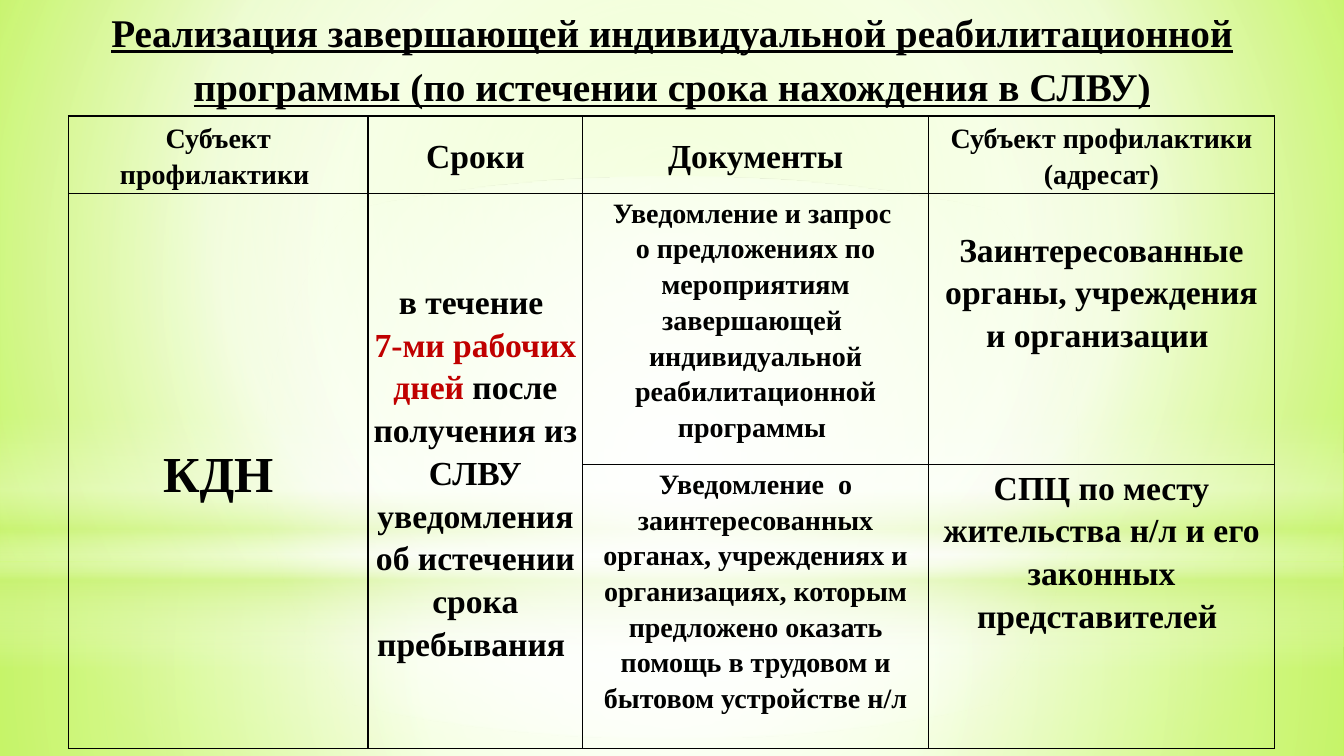
from lxml.etree import SubElement
from pptx import Presentation
from pptx.dml.color import RGBColor
from pptx.enum.shapes import MSO_SHAPE
from pptx.enum.text import MSO_ANCHOR, MSO_AUTO_SIZE, PP_ALIGN
from pptx.oxml import parse_xml
from pptx.oxml.ns import nsdecls, qn
from pptx.util import Inches, Pt

FONT = "Times New Roman"
BLACK = RGBColor(0x00, 0x00, 0x00)
RED = RGBColor(0xC0, 0x00, 0x00)
WHITE = RGBColor(0xFF, 0xFF, 0xFF)
LIME = RGBColor(0xCA, 0xF2, 0x78)
BRIGHT_LIME = RGBColor(0xCA, 0xFF, 0x60)
PALE_LIME = RGBColor(0xF7, 0xFF, 0xE7)
DEEP_LIME = RGBColor(0xB7, 0xFF, 0x29)

CENTRE = (50, 50, 50, 50)
COLUMN_WIDTHS = (2.97, 2.13, 3.43, 3.43)
ROW_HEIGHTS = (0.77, 2.69, 2.82)
HEADERS = (("Субъект профилактики ", 20), ("Сроки", 24),
           ("Документы", 24), ("Субъект профилактики (адресат)", 20))


def set_gradient(fill, owner, stops, focus=None):
    """Fill with (position, colour, opacity) stops: round at focus, else downwards."""
    fill.gradient()
    old = next(owner.iter(qn("a:gradFill")))
    gradient = parse_xml(f'<a:gradFill {nsdecls("a")} rotWithShape="1"/>')
    stop_list = SubElement(gradient, qn("a:gsLst"))
    for position, colour, opacity in stops:
        stop = SubElement(stop_list, qn("a:gs"), pos=str(position * 1000))
        tint = SubElement(stop, qn("a:srgbClr"), val=str(colour))
        if opacity < 100:
            SubElement(tint, qn("a:alpha"), val=str(opacity * 1000))
    if focus:
        circle = SubElement(gradient, qn("a:path"))
        circle.set("path", "circle")
        edges = {side: str(value * 1000) for side, value in zip("ltrb", focus)}
        SubElement(circle, qn("a:fillToRect"), edges)
    else:
        SubElement(gradient, qn("a:lin"), ang="5400000", scaled="0")
    old.getparent().replace(old, gradient)


def add_glow(page, kind, top, height, stops, focus=None):
    glow = page.shapes.add_shape(kind, 0, Inches(top), Inches(13.33), Inches(height))
    glow.shadow.inherit = False
    glow.line.fill.background()
    set_gradient(glow.fill, glow.element, stops, focus)


def add_backdrop(page):
    set_gradient(page.background.fill, page.element,
                 [(0, BRIGHT_LIME, 100), (60, PALE_LIME, 100), (100, DEEP_LIME, 100)],
                 (20, 10, 20, 60))
    add_glow(page, MSO_SHAPE.RECTANGLE, 5.58, 1.92,
             [(0, WHITE, 91), (37, WHITE, 76), (100, LIME, 79)], CENTRE)
    add_glow(page, MSO_SHAPE.RECTANGLE, 0, 5.58,
             [(0, WHITE, 89), (48, WHITE, 62), (100, LIME, 79)], CENTRE)
    add_glow(page, MSO_SHAPE.RECTANGLE, 4.12, 2.5,
             [(0, WHITE, 0), (29, WHITE, 30), (45, LIME, 40),
              (55, WHITE, 26), (65, LIME, 60), (100, WHITE, 0)])
    add_glow(page, MSO_SHAPE.OVAL, 1.75, 5.58,
             [(0, WHITE, 100), (56, WHITE, 0)], CENTRE)


def write(frame, *paragraphs, size, underline=None):
    """Write paragraphs; each is a string or a list of (text, colour) spans."""
    frame.word_wrap = True
    for index, spans in enumerate(paragraphs):
        para = frame.add_paragraph() if index else frame.paragraphs[0]
        para.alignment = PP_ALIGN.CENTER
        para.line_spacing = 1.15
        if isinstance(spans, str):
            spans = [(spans, BLACK)]
        for text, colour in spans:
            span = para.add_run()
            span.text = text
            span.font.name = FONT
            span.font.size = Pt(size)
            span.font.bold = True
            span.font.underline = underline
            span.font.color.rgb = colour


def add_title(page, left, top, width, height):
    title = page.shapes.title
    title.left, title.top = Inches(left), Inches(top)
    title.width, title.height = Inches(width), Inches(height)
    frame = title.text_frame
    frame.auto_size = MSO_AUTO_SIZE.NONE
    frame.vertical_anchor = MSO_ANCHOR.TOP
    write(frame, "Реализация завершающей индивидуальной реабилитационной "
          "программы (по истечении срока нахождения в СЛВУ)",
          size=28, underline=True)
    title.element.getparent().append(title.element)  # in front of the backdrop


def format_cell(cell):
    cell.fill.background()
    cell.margin_left = cell.margin_right = Inches(0.05)
    cell.margin_top = cell.margin_bottom = 0
    properties = cell.fill._xPr
    for index, side in enumerate(("lnL", "lnR", "lnT", "lnB")):
        properties.insert(index, parse_xml(
            f'<a:{side} {nsdecls("a")} w="12700"><a:solidFill>'
            f'<a:srgbClr val="{BLACK}"/></a:solidFill></a:{side}>'))


def add_programme_table(page, left, top):
    table = page.shapes.add_table(
        len(ROW_HEIGHTS), len(COLUMN_WIDTHS), Inches(left), Inches(top),
        Inches(sum(COLUMN_WIDTHS)), Inches(sum(ROW_HEIGHTS))).table
    table.first_row = table.horz_banding = False
    for column, width in zip(table.columns, COLUMN_WIDTHS):
        column.width = Inches(width)
    for row, height in zip(table.rows, ROW_HEIGHTS):
        row.height = Inches(height)
    for cell in table.iter_cells():
        format_cell(cell)

    for column, (header, size) in enumerate(HEADERS):
        cell = table.cell(0, column)
        cell.vertical_anchor = MSO_ANCHOR.MIDDLE
        write(cell.text_frame, header, size=size)
    for column in (0, 1):
        cell = table.cell(1, column)
        cell.merge(table.cell(2, column))
        cell.vertical_anchor = MSO_ANCHOR.MIDDLE

    write(table.cell(1, 0).text_frame, "КДН", size=36)
    write(table.cell(1, 1).text_frame, "в течение ",
          [("7-ми рабочих дней", RED),
           (" после получения из СЛВУ уведомления об истечении срока пребывания ", BLACK)],
          size=24)
    write(table.cell(1, 2).text_frame, "Уведомление и запрос ",
          "о предложениях по мероприятиям завершающей  индивидуальной "
          "реабилитационной программы ", size=20)
    write(table.cell(2, 2).text_frame,
          "Уведомление  о заинтересованных органах, учреждениях и организациях, "
          "которым предложено оказать помощь в трудовом и бытовом устройстве н/л",
          size=20)
    addressees = table.cell(1, 3)
    addressees.margin_top = Inches(0.33)
    write(addressees.text_frame,
          "Заинтересованные органы, учреждения и организации ", size=24)
    write(table.cell(2, 3).text_frame,
          "СПЦ по месту жительства н/л и его законных представителей ", size=24)


def main():
    deck = Presentation()
    deck.slide_width, deck.slide_height = Inches(13.33), Inches(7.5)
    page = deck.slides.add_slide(deck.slide_layouts[5])
    add_backdrop(page)
    add_title(page, 0.68, -0.04, 11.97, 1.18)
    add_programme_table(page, 0.68, 1.15)
    deck.save("out.pptx")


if __name__ == "__main__":
    main()
